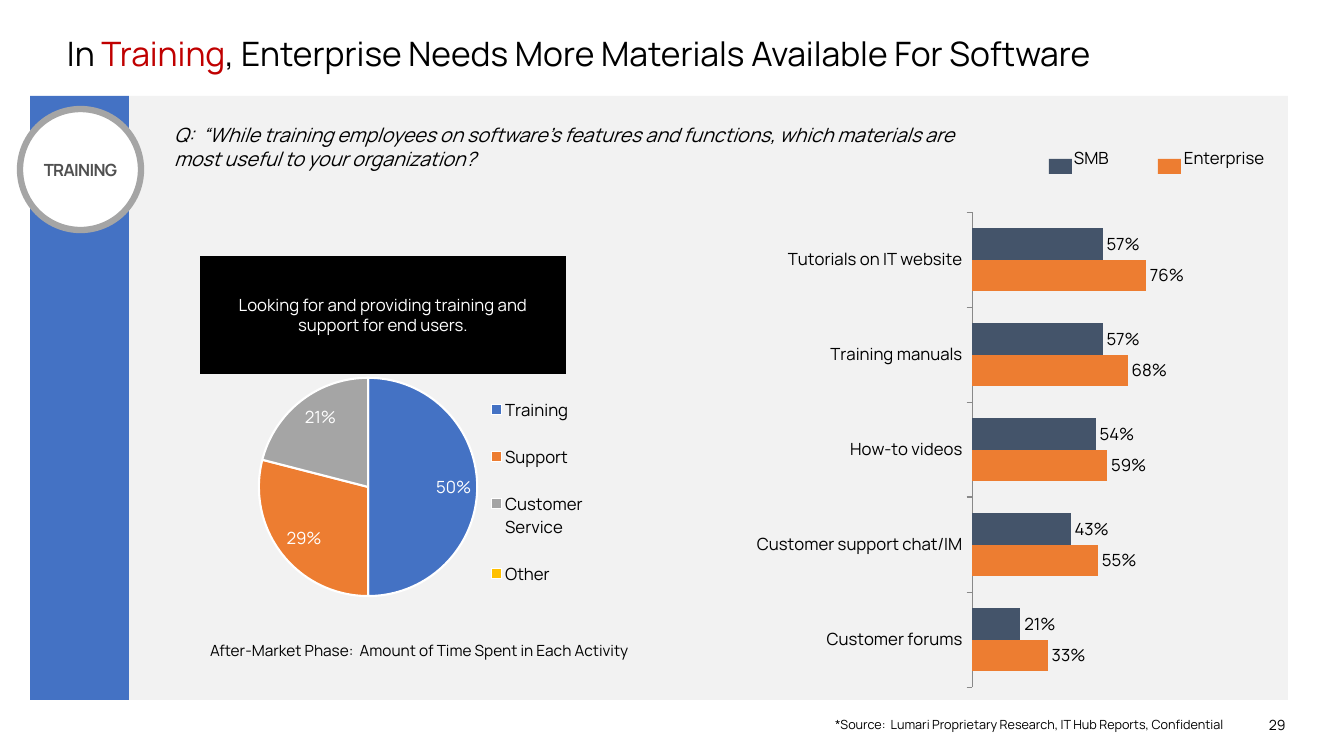
from lxml import etree
from pptx import Presentation
from pptx.chart.data import CategoryChartData
from pptx.dml.color import RGBColor
from pptx.enum.chart import XL_CHART_TYPE, XL_LABEL_POSITION, XL_LEGEND_POSITION, XL_TICK_MARK
from pptx.enum.shapes import MSO_SHAPE
from pptx.enum.text import MSO_ANCHOR, PP_ALIGN
from pptx.oxml import parse_xml
from pptx.oxml.ns import nsdecls
from pptx.util import Pt

PX = 914400 / 100.8
FONT = "Manrope"
BLACK = RGBColor(0x00, 0x00, 0x00)
WHITE = RGBColor(0xFF, 0xFF, 0xFF)
RED = RGBColor(0xC0, 0x00, 0x00)
PANEL_GRAY = RGBColor(0xF2, 0xF2, 0xF2)
MID_GRAY = RGBColor(0xA5, 0xA5, 0xA5)
AXIS_GRAY = RGBColor(0x89, 0x89, 0x89)
BADGE_GRAY = RGBColor(0x50, 0x50, 0x50)
BLUE = RGBColor(0x44, 0x72, 0xC4)
ORANGE = RGBColor(0xED, 0x7D, 0x31)
YELLOW = RGBColor(0xFF, 0xC0, 0x00)
SLATE = RGBColor(0x44, 0x54, 0x6A)


def px(*lengths):
    return [round(length * PX) for length in lengths]


def write(shape, runs, size, color=BLACK, anchor=MSO_ANCHOR.TOP, margins=(10, 5), wrap=True):
    """Fill a shape with one paragraph and return the paragraph."""
    frame = shape.text_frame
    frame.word_wrap = wrap
    frame.vertical_anchor = anchor
    frame.margin_left = frame.margin_right = px(margins[0])[0]
    frame.margin_top = frame.margin_bottom = px(margins[1])[0]
    paragraph = frame.paragraphs[0]
    for text in runs:
        paragraph.add_run().text = text
    paragraph.font.name = FONT
    paragraph.font.size = Pt(size)
    paragraph.font.color.rgb = color
    return paragraph


prs = Presentation()
prs.slide_width, prs.slide_height = px(1344, 756)
slide = prs.slides.add_slide(prs.slide_layouts[6])
shapes = slide.shapes

# Panel, sidebar, bar legend swatches, message box and badge
blocks = []
for kind, box, color in [
    (MSO_SHAPE.RECTANGLE, (129, 96, 1159, 604), PANEL_GRAY),
    (MSO_SHAPE.RECTANGLE, (30, 96, 99, 604), BLUE),
    (MSO_SHAPE.RECTANGLE, (1049, 159, 23, 15), SLATE),
    (MSO_SHAPE.RECTANGLE, (1158, 159, 23, 15), ORANGE),
    (MSO_SHAPE.RECTANGLE, (200, 256, 366, 118), BLACK),
    (MSO_SHAPE.OVAL, (20, 109, 121, 121), WHITE),
]:
    block = shapes.add_shape(kind, *px(*box))
    block.shadow.inherit = False
    block.fill.solid()
    block.fill.fore_color.rgb = color
    block.line.fill.background()
    blocks.append(block)
message, badge = blocks[-2:]

message_text = write(message, ["Looking for and providing training and support for end users."],
                     12, WHITE, MSO_ANCHOR.MIDDLE, (10, 10))
message_text.alignment = PP_ALIGN.CENTER
message_text.space_after = Pt(12)

badge.line.color.rgb = MID_GRAY
badge.line.width = Pt(4.5)
badge_text = write(badge, ["TRAINING"], 12, BADGE_GRAY, MSO_ANCHOR.MIDDLE, (0, 1))
badge_text.alignment = PP_ALIGN.CENTER
badge_text.font.bold = True
badge_text.runs[0].font._element.set("spc", "-50")

# Title
title = write(shapes.add_textbox(*px(57, 14, 1230, 83)),
              ["In ", "Training", ", Enterprise Needs More Materials Available For Software"],
              24, anchor=MSO_ANCHOR.MIDDLE)
title.line_spacing = 0.9
title.runs[1].font.color.rgb = RED

# Bar legend names
for name, left in [("SMB", 1054), ("Enterprise", 1164)]:
    legend_name = write(shapes.add_textbox(*px(left, 141, 126, 50)), [name], 12, margins=(20, 16))
    legend_name.line_spacing = 0.9
    legend_name.space_after = Pt(6)

# Pie chart: time spent
time_data = CategoryChartData(number_format="0%")
time_data.categories = ["Training", "Support", "Customer Service", "Other"]
time_data.add_series("Time spent", [0.5, 0.29, 0.21, None])
time_chart = shapes.add_chart(XL_CHART_TYPE.PIE, *px(193, 355, 412, 322), time_data).chart
time_chart.has_legend = True
time_chart.legend.position = XL_LEGEND_POSITION.BOTTOM
time_chart.legend.include_in_layout = False
time_chart.legend.font.size = Pt(12)
time_chart.legend.font.name = FONT
time_chart.legend.font.color.rgb = BLACK
time_plot = time_chart.plots[0]
for index, color in enumerate([BLUE, ORANGE, MID_GRAY, YELLOW]):
    wedge = time_plot.series[0].points[index].format
    wedge.fill.solid()
    wedge.fill.fore_color.rgb = color
    wedge.line.color.rgb = WHITE
    wedge.line.width = Pt(1.5)

# Bar chart: most useful materials
material_data = CategoryChartData(number_format="0%")
material_data.categories = ["Tutorials on IT website", "Training manuals", "How-to videos",
                            "Customer support chat/IM", "Customer forums"]
material_data.add_series("SMB", [0.57, 0.57, 0.54, 0.43, 0.21])
material_data.add_series("Enterprise", [0.76, 0.68, 0.59, 0.55, 0.33])
material_chart = shapes.add_chart(XL_CHART_TYPE.BAR_CLUSTERED, *px(672, 163, 601, 546),
                                  material_data).chart
material_chart.has_legend = False
material_plot = material_chart.plots[0]
material_plot.gap_width = 100
material_plot.overlap = 0
for series, color in zip(material_plot.series, [SLATE, ORANGE]):
    series.format.fill.solid()
    series.format.fill.fore_color.rgb = color
    series.invert_if_negative = False
materials = material_chart.category_axis
materials.reverse_order = True
materials.major_tick_mark = XL_TICK_MARK.OUTSIDE
materials.format.line.color.rgb = AXIS_GRAY
materials.has_major_gridlines = False
share = material_chart.value_axis
share.minimum_scale, share.maximum_scale = 0, 1
share.has_major_gridlines = False
share.visible = False

# Fonts and value labels of both charts
for chart, vary, label_color, position in [
    (time_chart, True, WHITE, XL_LABEL_POSITION.INSIDE_END),
    (material_chart, False, BLACK, XL_LABEL_POSITION.OUTSIDE_END),
]:
    chart.has_title = False
    chart.font.name = FONT
    chart.font.size = Pt(12)
    chart.font.color.rgb = BLACK
    plot = chart.plots[0]
    plot.vary_by_categories = vary
    plot.has_data_labels = True
    labels = plot.data_labels
    labels.show_value = True
    labels.show_percentage = False
    labels.number_format = "0%"
    labels.number_format_is_linked = False
    labels.position = position
    labels.font.name = FONT
    labels.font.size = Pt(12)
    labels.font.color.rgb = label_color

# Fixed places of the plots and the pie legend, as fractions of their chart
for parent, target, box in [
    (time_chart._chartSpace.chart.plotArea, "inner", (0.16, 0.07, 0.53, 0.68)),
    (time_chart.legend._element, None, (0.7, 0.06, 0.27, 0.73)),
    (material_chart._chartSpace.chart.plotArea, "inner", (0.5, 0.09, 0.38, 0.87)),
]:
    for old in parent.findall("{*}layout"):
        parent.remove(old)
    layout = parse_xml(f"<c:layout {nsdecls('c')}><c:manualLayout/></c:layout>")
    settings = [("layoutTarget", target)] if target else []
    settings += [("xMode", "edge"), ("yMode", "edge"), *zip("xywh", box)]
    for tag, value in settings:
        etree.SubElement(layout[0], layout.tag.replace("layout", tag)).set("val", str(value))
    parent.insert(0 if target else 1, layout)

# Question, caption, source and page number
question = write(shapes.add_textbox(*px(164, 118, 827, 57)),
                 ["Q:  “While training employees on software’s features and functions, "
                  "which materials are most useful to your organization?"], 14)
question.font.italic = True
write(shapes.add_textbox(*px(200, 636, 448, 29)),
      ["After-Market Phase:  Amount of Time Spent in Each Activity"], 11, wrap=False)
write(shapes.add_textbox(*px(825, 712, 430, 25)),
      ["*Source:  Lumari Proprietary Research, IT Hub Reports, Confidential"], 9, wrap=False)
write(shapes.add_textbox(*px(1256, 713, 61, 24)), ["29"], 10,
      anchor=MSO_ANCHOR.MIDDLE, margins=(13, 7))

prs.save("out.pptx")
